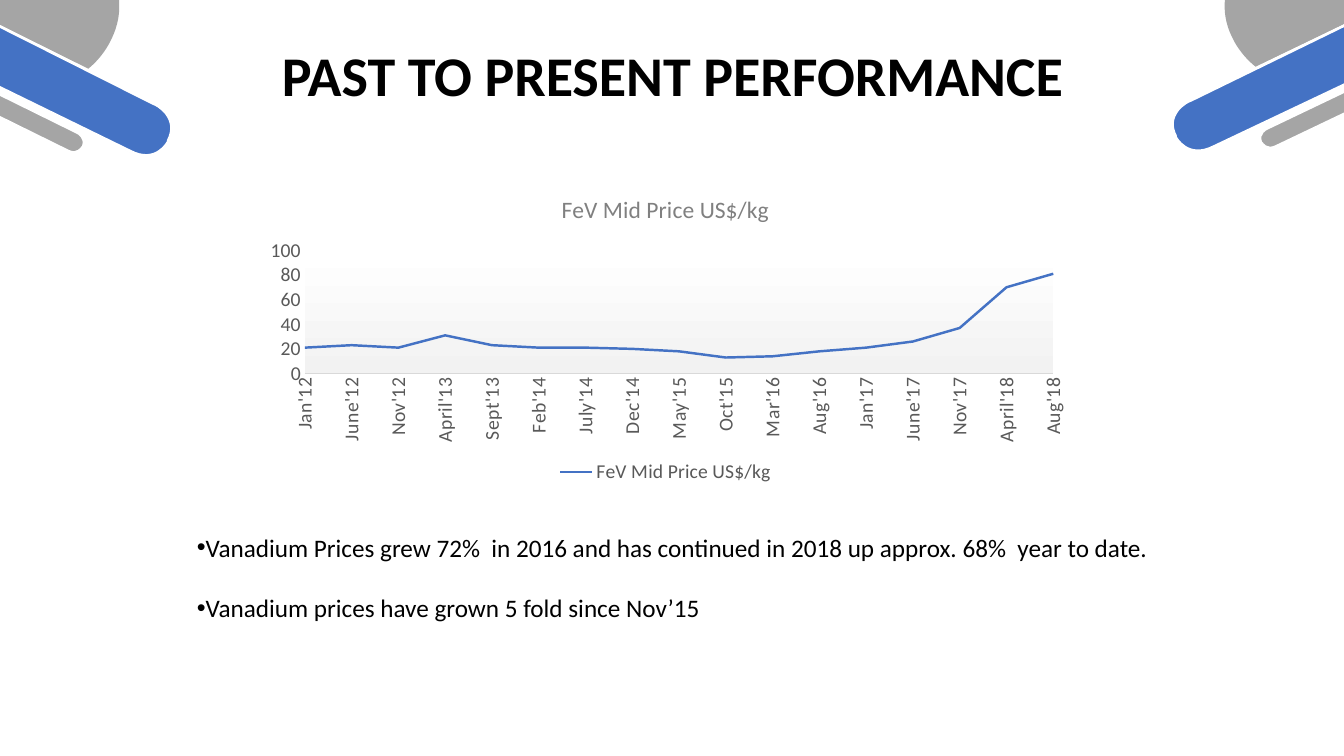
import pptx
import pptx.chart.data
import pptx.dml.color
import pptx.enum.chart
import pptx.enum.text
import pptx.oxml
import pptx.oxml.ns
import pptx.util

TITLE = "PAST TO PRESENT PERFORMANCE"
SERIES = "FeV Mid Price US$/kg "
PRICES = [
    ("Jan'12", 21), ("June'12", 23), ("Nov'12", 21), ("April'13", 31),
    ("Sept'13", 23), ("Feb'14", 21), ("July'14", 21), ("Dec'14", 20),
    ("May'15", 18), ("Oct'15", 13), ("Mar'16", 14), ("Aug'16", 18),
    ("Jan'17", 21), ("June'17", 26), ("Nov'17", 37), ("April'18", 70),
    ("Aug'18", 81),
]
REMARKS = [
    "Vanadium Prices grew 72%  in 2016 and has continued in 2018 up approx. 68%  year to date.",
    "Vanadium prices have grown 5 fold since Nov’15",
]

THEME = {
    "font": "Calibri", "bullet_font": "Arial", "title_size": 40, "body_size": 18,
    "chart_title_size": 16.8, "chart_size": 14, "chart_spacing": "20",
    "ink": "000000", "label": "595959", "chart_title": "808080", "axis": "D9D9D9",
    "blue": "4472C4", "grey": "A5A5A5", "white": "FFFFFF", "plot_end": "F2F2F2",
}

# Left corner outlines in px: a pair is a line end, six numbers are a cubic curve.
CORNER = [
    ("blue", [(154, 104), (154, 104, 180, 117, 169, 140), (168, 141),
              (168, 141, 157, 165, 130, 152), (0, 87), (0, 26)]),
    ("grey", [(110, 42), (110, 42, 103, 57, 88, 69), (0, 25), (0, -1), (119, -1),
              (120, 11, 119, 24, 111, 40)]),
    ("grey", [(0, 94), (77, 132), (77, 132, 87, 137, 83, 147),
              (83, 147, 78, 157, 68, 152), (0, 118)]),
    ("white", [(69, 150), (77, 154, 81, 147, 81, 147), (82, 146),
               (85, 138, 77, 134, 77, 134), (0, 96), (0, 93), (78, 131),
               (78, 131, 83, 134, 85, 139), (86, 142, 86, 145, 84, 148),
               (83, 151, 79, 155, 74, 155), (72, 155, 70, 154, 68, 153),
               (0, 120), (0, 116)]),
    ("white", [(131, 150), (156, 163, 167, 141, 167, 141), (167, 140),
               (172, 130, 171, 122, 165, 114), (160, 108, 154, 105, 153, 105),
               (0, 28), (0, 25), (155, 102), (155, 103, 168, 109, 172, 121),
               (174, 127, 173, 134, 170, 141), (170, 142),
               (170, 142, 162, 157, 146, 157), (141, 157, 136, 156, 130, 153),
               (0, 89), (0, 86)]),
]
SLIDE_W, SLIDE_H = 1344, 756
RIGHT_SQUASH = 0.97
TITLE_BOX = (205, 39, 935, 75)
CHART_BOX = (254, 178, 828, 310)
REMARKS_BOX = (187, 527, 1012, 132)


def px(length):
    return pptx.util.Emu(round(length * 914400 / 100.8))


def color(key):
    return pptx.dml.color.RGBColor.from_string(THEME[key])


def xml(text):
    """Parse an element whose opening tag holds NS for the namespaces."""
    return pptx.oxml.parse_xml(text.replace("NS", pptx.oxml.ns.nsdecls("c", "a"), 1))


def style(font, size, ink, bold=False):
    font.name = THEME["font"]
    font.size = pptx.util.Pt(THEME[size])
    font.bold = bold
    font.color.rgb = color(ink)


def bend(band, outline):
    """Join the three points of each curve into one cubic segment."""
    lines = iter(band._element.xpath(".//a:lnTo"))
    for segment in outline[1:]:
        first = next(lines)
        if len(segment) == 6:
            curve = xml("<a:cubicBezTo NS/>")
            first.addprevious(curve)
            for line in (first, next(lines), next(lines)):
                curve.append(line[0])
                line.getparent().remove(line)


def add_corner(slide, mirrored):
    for fill, outline in CORNER:
        points = [segment[i:i + 2] for segment in outline
                  for i in range(0, len(segment), 2)]
        if mirrored:
            points = [(SLIDE_W - x, y * RIGHT_SQUASH) for x, y in points]
        points = [(px(x), px(y)) for x, y in points]
        builder = slide.shapes.build_freeform(*points[0])
        builder.add_line_segments(points[1:], close=True)
        band = builder.convert_to_shape()
        bend(band, outline)
        band.shadow.inherit = False
        band.fill.solid()
        band.fill.fore_color.rgb = color(fill)
        band.line.fill.background()


def add_text_frame(slide, box):
    frame = slide.shapes.add_textbox(*map(px, box)).text_frame
    frame.word_wrap = True
    return frame


def add_title(slide):
    frame = add_text_frame(slide, TITLE_BOX)
    frame.vertical_anchor = pptx.enum.text.MSO_ANCHOR.BOTTOM
    heading = frame.paragraphs[0]
    heading.alignment = pptx.enum.text.PP_ALIGN.CENTER
    heading.line_spacing = 0.9
    run = heading.add_run()
    run.text = TITLE
    style(run.font, "title_size", "ink", bold=True)


def add_remarks(slide):
    frame = add_text_frame(slide, REMARKS_BOX)
    for index, remark in enumerate(REMARKS):
        paragraph = frame.add_paragraph() if index else frame.paragraphs[0]
        if index:
            paragraph.space_before = pptx.util.Pt(21.5)
        properties = paragraph._p.get_or_add_pPr()
        properties.append(xml(f'<a:buFont NS typeface="{THEME["bullet_font"]}"/>'))
        properties.append(xml('<a:buChar NS char="•"/>'))
        run = paragraph.add_run()
        run.text = remark
        style(run.font, "body_size", "ink")


def add_price_chart(slide):
    prices = pptx.chart.data.CategoryChartData()
    prices.categories = [month for month, _ in PRICES]
    prices.add_series(SERIES, [price for _, price in PRICES])
    chart = slide.shapes.add_chart(
        pptx.enum.chart.XL_CHART_TYPE.LINE_STACKED, *map(px, CHART_BOX), prices).chart
    style(chart.font, "chart_size", "ink")

    chart.has_title = True
    heading = chart.chart_title.text_frame.paragraphs[0].add_run()
    heading.text = SERIES
    style(heading.font, "chart_title_size", "chart_title")
    chart.chart_title.include_in_layout = False

    chart.has_legend = True
    chart.legend.position = pptx.enum.chart.XL_LEGEND_POSITION.BOTTOM
    chart.legend.include_in_layout = False
    style(chart.legend.font, "chart_size", "label")

    months, dollars = chart.category_axis, chart.value_axis
    for axis in (months, dollars):
        axis.has_major_gridlines = False
        axis.major_tick_mark = axis.minor_tick_mark = pptx.enum.chart.XL_TICK_MARK.NONE
        style(axis.tick_labels.font, "chart_size", "label")
    months.format.line.color.rgb = color("axis")
    months.format.line.width = pptx.util.Pt(0.75)
    dollars.format.line.fill.background()
    dollars.minimum_scale, dollars.maximum_scale, dollars.major_unit = 0, 100, 20

    chart.plots[0].vary_by_categories = False
    trend = chart.plots[0].series[0]
    trend.smooth = False
    trend.marker.style = pptx.enum.chart.XL_MARKER_STYLE.NONE
    trend.format.line.color.rgb = color("blue")
    trend.format.line.width = pptx.util.Pt(1.75)

    root = chart.element
    root.xpath(".//c:catAx/c:txPr/a:bodyPr")[0].set("rot", "-5400000")
    for spaced in root.xpath(".//c:catAx/c:txPr//a:defRPr | .//c:title//a:rPr"):
        spaced.set("spc", THEME["chart_spacing"])
    for crossing in root.xpath(".//c:valAx/c:crossBetween"):
        crossing.getparent().remove(crossing)
    root.xpath(".//c:valAx/c:crosses")[0].addnext(xml('<c:crossBetween NS val="midCat"/>'))
    root.xpath(".//c:plotArea")[0].append(xml(
        '<c:spPr NS><a:gradFill><a:gsLst>'
        f'<a:gs pos="0"><a:srgbClr val="{THEME["white"]}"/></a:gs>'
        f'<a:gs pos="100000"><a:srgbClr val="{THEME["plot_end"]}"/></a:gs>'
        '</a:gsLst><a:lin ang="5400000" scaled="0"/></a:gradFill></c:spPr>'))


def main():
    deck = pptx.Presentation()
    deck.slide_width, deck.slide_height = px(SLIDE_W), px(SLIDE_H)
    slide = deck.slides.add_slide(deck.slide_layouts[6])
    for mirrored in (False, True):
        add_corner(slide, mirrored)
    add_title(slide)
    add_price_chart(slide)
    add_remarks(slide)
    deck.save("out.pptx")


if __name__ == "__main__":
    main()
